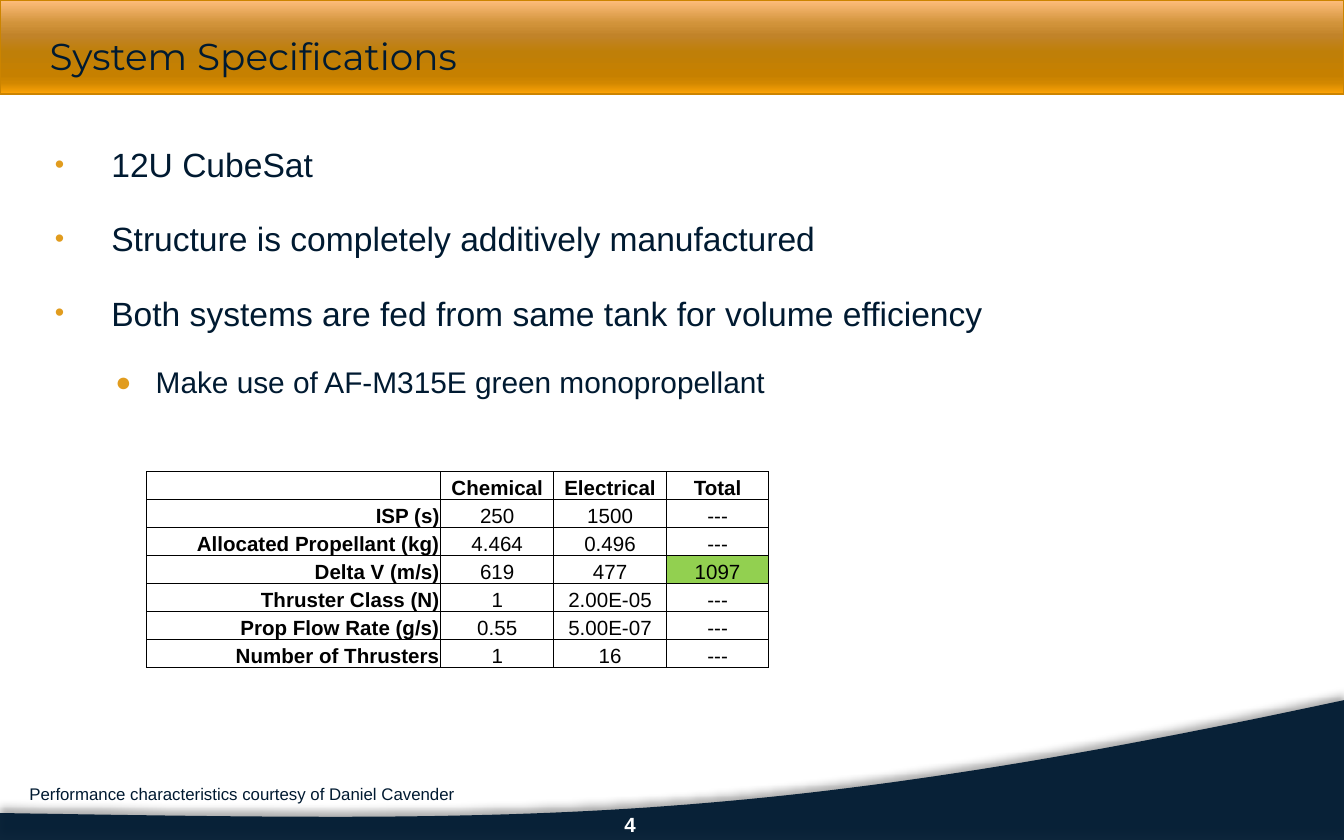
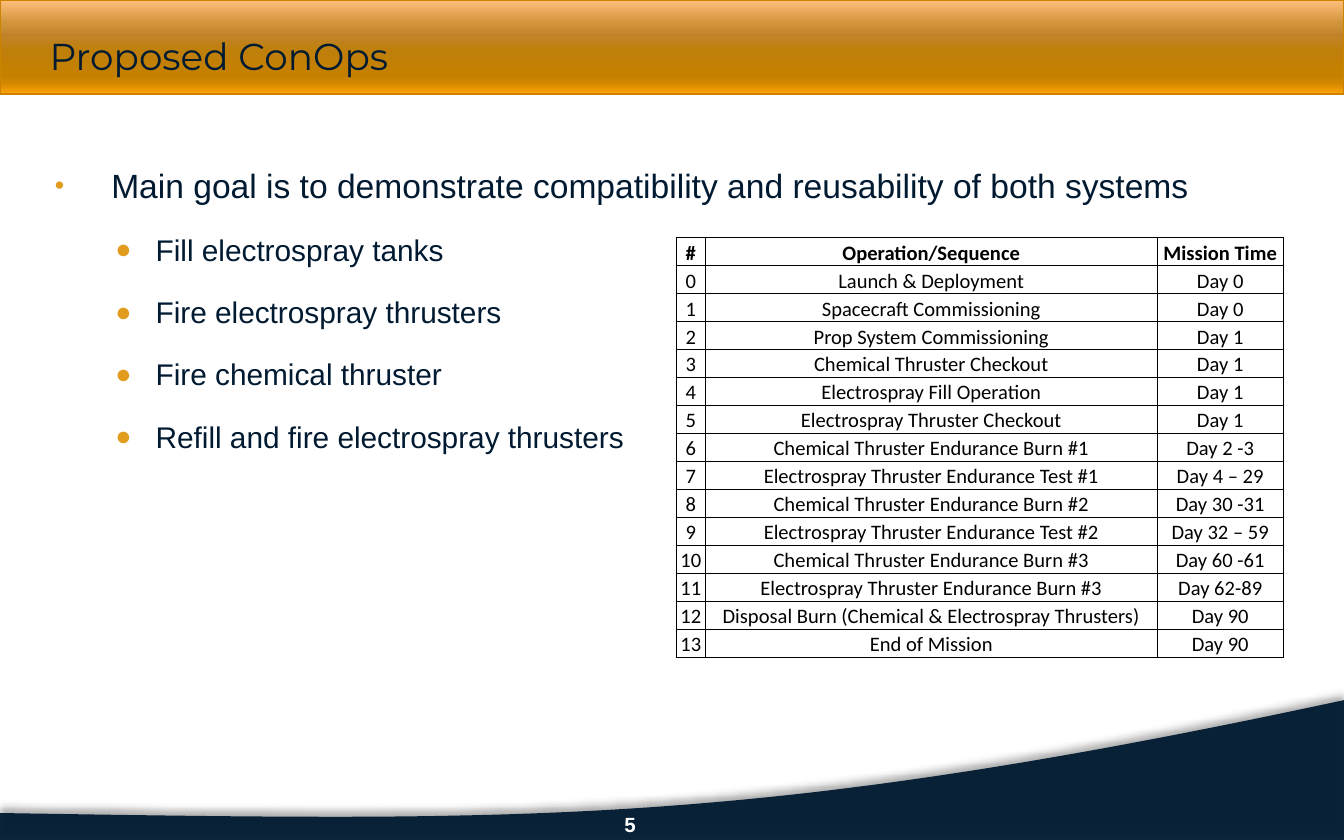
import lxml.etree
import pptx
import pptx.dml.color
import pptx.enum.dml
import pptx.enum.shapes
import pptx.enum.text
import pptx.oxml.ns
import pptx.util

Inches = pptx.util.Inches
Pt = pptx.util.Pt
qn = pptx.oxml.ns.qn
ALIGN = pptx.enum.text.PP_ALIGN

COLORS = {
    "navy": "001A31",
    "white": "FFFFFF",
    "black": "000000",
    "bullet": "E19C1E",
    "band_line": "CC8400",
    "highlight": "92D050",
}
BAND_STOPS = [
    (0, "FFBE7C"), (25, "D1933A"), (38, "C18329"), (55, "BF7F08"),
    (80, "C68000"), (88, "D18700"), (100, "FFA507"),
]
SWOOSH_CURVE = [(10, 5.21), (5.59, 6.16), (3.91, 6.11), (0, 6.05)]
SWOOSH_STEPS = 60
BULLETS = [
    {"char": "•", "scale": 80, "left": 0.46, "hang": 0.42, "size": 18},
    {"char": "●", "scale": 90, "left": 0.79, "hang": 0.3, "size": 16},
]

SPECIFICATIONS = [
    (0, "12U CubeSat"),
    (0, "Structure is completely additively manufactured"),
    (0, "Both systems are fed from same tank for volume efficiency"),
    (1, "Make use of AF-M315E green monopropellant"),
]
PERFORMANCE = [
    ("", "Chemical", "Electrical", "Total"),
    ("ISP (s)", "250", "1500", "---"),
    ("Allocated Propellant (kg)", "4.464", "0.496", "---"),
    ("Delta V (m/s)", "619", "477", "1097"),
    ("Thruster Class (N)", "1", "2.00E-05", "---"),
    ("Prop Flow Rate (g/s)", "0.55", "5.00E-07", "---"),
    ("Number of Thrusters", "1", "16", "---"),
]
GOALS = [
    (0, "Main goal is to demonstrate compatibility and reusability of both systems"),
    (1, "Fill electrospray tanks"),
    (1, "Fire electrospray thrusters"),
    (1, "Fire chemical thruster"),
    (1, "Refill and fire electrospray thrusters"),
]
OPERATIONS = [
    ("Launch & Deployment", "Day 0"),
    ("Spacecraft Commissioning", "Day 0"),
    ("Prop System Commissioning", "Day 1"),
    ("Chemical Thruster Checkout", "Day 1"),
    ("Electrospray Fill Operation", "Day 1"),
    ("Electrospray Thruster Checkout", "Day 1"),
    ("Chemical Thruster Endurance Burn #1", "Day 2 -3"),
    ("Electrospray Thruster Endurance Test #1", "Day 4 – 29"),
    ("Chemical Thruster Endurance Burn #2", "Day 30 -31"),
    ("Electrospray Thruster Endurance Test #2", "Day 32 – 59"),
    ("Chemical Thruster Endurance Burn #3", "Day 60 -61"),
    ("Electrospray Thruster Endurance Burn #3", "Day 62-89"),
    ("Disposal Burn (Chemical & Electrospray Thrusters)", "Day 90"),
    ("End of Mission", "Day 90"),
]


def rgb(name):
    return pptx.dml.color.RGBColor.from_string(COLORS[name])


def add_node(parent, tag, **attributes):
    return lxml.etree.SubElement(parent, qn(tag), **attributes)


def add_color(parent, value, alpha=None):
    color = add_node(parent, "a:srgbClr", val=value)
    if alpha is not None:
        add_node(color, "a:alpha", val=str(alpha * 1000))


def add_span(para, text, size, color="navy", font="Arial", bold=False):
    span = para.add_run()
    span.text = text
    span.font.size = Pt(size)
    span.font.name = font
    span.font.bold = bold
    span.font.color.rgb = rgb(color)


def add_box(page, left, top, width, height):
    box = page.shapes.add_textbox(*map(Inches, (left, top, width, height)))
    box.text_frame.word_wrap = True
    return box.text_frame


def add_band(page):
    band = page.shapes.add_shape(
        pptx.enum.shapes.MSO_SHAPE.RECTANGLE, 0, 0, Inches(10), Inches(0.7))
    band.shadow.inherit = False
    band.fill.gradient()
    band.fill.gradient_angle = 270
    stops = band.element.spPr.find(".//" + qn("a:gsLst"))
    for stop in list(stops):
        stops.remove(stop)
    for position, value in BAND_STOPS:
        add_color(add_node(stops, "a:gs", pos=str(position * 1000)), value)
    band.line.color.rgb = rgb("band_line")
    band.line.width = Pt(0.75)


def curve_point(step):
    t = step / SWOOSH_STEPS
    weights = ((1 - t) ** 3, 3 * t * (1 - t) ** 2, 3 * t * t * (1 - t), t ** 3)
    return tuple(
        Inches(sum(weight * point[axis] for weight, point in zip(weights, SWOOSH_CURVE)))
        for axis in (0, 1))


def add_swoosh(page):
    builder = page.shapes.build_freeform(0, Inches(6.05))
    corners = [(0, Inches(6.25)), (Inches(10), Inches(6.25))]
    curve = [curve_point(step) for step in range(SWOOSH_STEPS + 1)]
    builder.add_line_segments(corners + curve, close=True)
    swoosh = builder.convert_to_shape()
    swoosh.fill.solid()
    swoosh.fill.fore_color.rgb = rgb("navy")
    fill_color = swoosh.element.spPr.find(qn("a:solidFill"))[0]
    add_node(fill_color, "a:alpha", val="95000")
    swoosh.line.fill.background()
    swoosh.shadow.inherit = False
    shadow = add_node(
        swoosh.element.spPr.find(qn("a:effectLst")), "a:outerShdw",
        blurRad=str(Pt(4)), dist=str(Pt(3.5)), dir="16200000", rotWithShape="0")
    add_color(shadow, COLORS["black"], 35)


def add_title(page, text):
    title = page.shapes.title
    page.shapes.element.append(title.element)
    title.left, title.top = Inches(0.27), Inches(0.19)
    title.width, title.height = Inches(9.32), Inches(0.44)
    title.text_frame.auto_size = pptx.enum.text.MSO_AUTO_SIZE.SHAPE_TO_FIT_TEXT
    para = title.text_frame.paragraphs[0]
    para.alignment = ALIGN.LEFT
    add_span(para, text, 20, font="Montserrat")


def add_page(deck, title, number):
    page = deck.slides.add_slide(deck.slide_layouts[5])
    add_band(page)
    add_swoosh(page)
    para = add_box(page, 4, 5.99, 0.83, 0.2).paragraphs[0]
    para.alignment = ALIGN.RIGHT
    add_span(para, str(number), 11, "white", bold=True)
    add_title(page, title)
    return page


def add_bullets(page, area, items, line_spacing, gap):
    frame = add_box(page, *area)
    for index, (level, text) in enumerate(items):
        para = frame.add_paragraph() if index else frame.paragraphs[0]
        style = BULLETS[level]
        para.level = level
        properties = para._p.get_or_add_pPr()
        properties.set("marL", str(Inches(style["left"])))
        properties.set("indent", str(-Inches(style["hang"])))
        add_color(add_node(properties, "a:buClr"), COLORS["bullet"])
        add_node(properties, "a:buSzPct", val=str(style["scale"] * 1000))
        add_node(properties, "a:buFont", typeface="Arial")
        add_node(properties, "a:buChar", char=style["char"])
        para.line_spacing = line_spacing
        if index:
            para.space_before = Pt(gap)
        add_span(para, text, style["size"])


def add_borders(cell):
    properties = cell._tc.get_or_add_tcPr()
    for side in "LRTB":
        line = add_node(properties, "a:ln" + side, w=str(Pt(0.5)))
        add_color(add_node(line, "a:solidFill"), COLORS["black"])


def fill_cell(cell, text, font, bold, alignment):
    cell.margin_left = cell.margin_right = cell.margin_top = Inches(0.01)
    cell.margin_bottom = 0
    cell.vertical_anchor = pptx.enum.text.MSO_ANCHOR.BOTTOM
    add_borders(cell)
    cell.fill.background()
    para = cell.text_frame.paragraphs[0]
    para.alignment = alignment
    if text:
        add_span(para, text, 11, "black", font, bold)
    else:
        add_node(para._p, "a:endParaRPr", sz="1100")


def add_grid(page, left, top, height, widths, rows, font, row_labels=False):
    table = page.shapes.add_table(
        len(rows), len(widths), Inches(left), Inches(top),
        Inches(sum(widths)), Inches(height)).table
    table.first_row = table.horz_banding = False
    for column, width in zip(table.columns, widths):
        column.width = Inches(width)
    for row_index, values in enumerate(rows):
        table.rows[row_index].height = Inches(height / len(rows))
        for column_index, text in enumerate(values):
            is_label = row_labels and column_index == 0
            fill_cell(
                table.cell(row_index, column_index), text, font,
                row_index == 0 or is_label,
                ALIGN.RIGHT if is_label else ALIGN.CENTER)
    return table


def add_specifications(deck):
    page = add_page(deck, "System Specifications", 4)
    add_bullets(page, (0.27, 0.84, 7.42, 2.37), SPECIFICATIONS, 1.6, 5.3)
    table = add_grid(
        page, 1.09, 3.51, 1.46, (2.19, 0.84, 0.84, 0.76), PERFORMANCE, "Arial",
        row_labels=True)
    total_delta_v = table.cell(3, 3)
    total_delta_v.fill.solid()
    total_delta_v.fill.fore_color.rgb = rgb("highlight")
    credit = add_box(page, 0.12, 5.78, 4.71, 0.3).paragraphs[0]
    add_span(credit, "Performance characteristics courtesy of Daniel Cavender", 9)


def add_operations(deck):
    page = add_page(deck, "Proposed ConOps", 5)
    rows = [("#", "Operation/Sequence", "Mission Time")]
    rows += [(str(index), *entry) for index, entry in enumerate(OPERATIONS)]
    add_grid(page, 5.03, 1.77, 3.12, (0.22, 3.36, 0.94), rows, "Calibri")
    add_bullets(page, (0.27, 1.03, 8.73, 4.05), GOALS, 1.5, 4.5)


def main():
    deck = pptx.Presentation()
    deck.slide_width = Inches(10)
    deck.slide_height = Inches(6.25)
    add_specifications(deck)
    add_operations(deck)
    deck.save("out.pptx")


if __name__ == "__main__":
    main()
